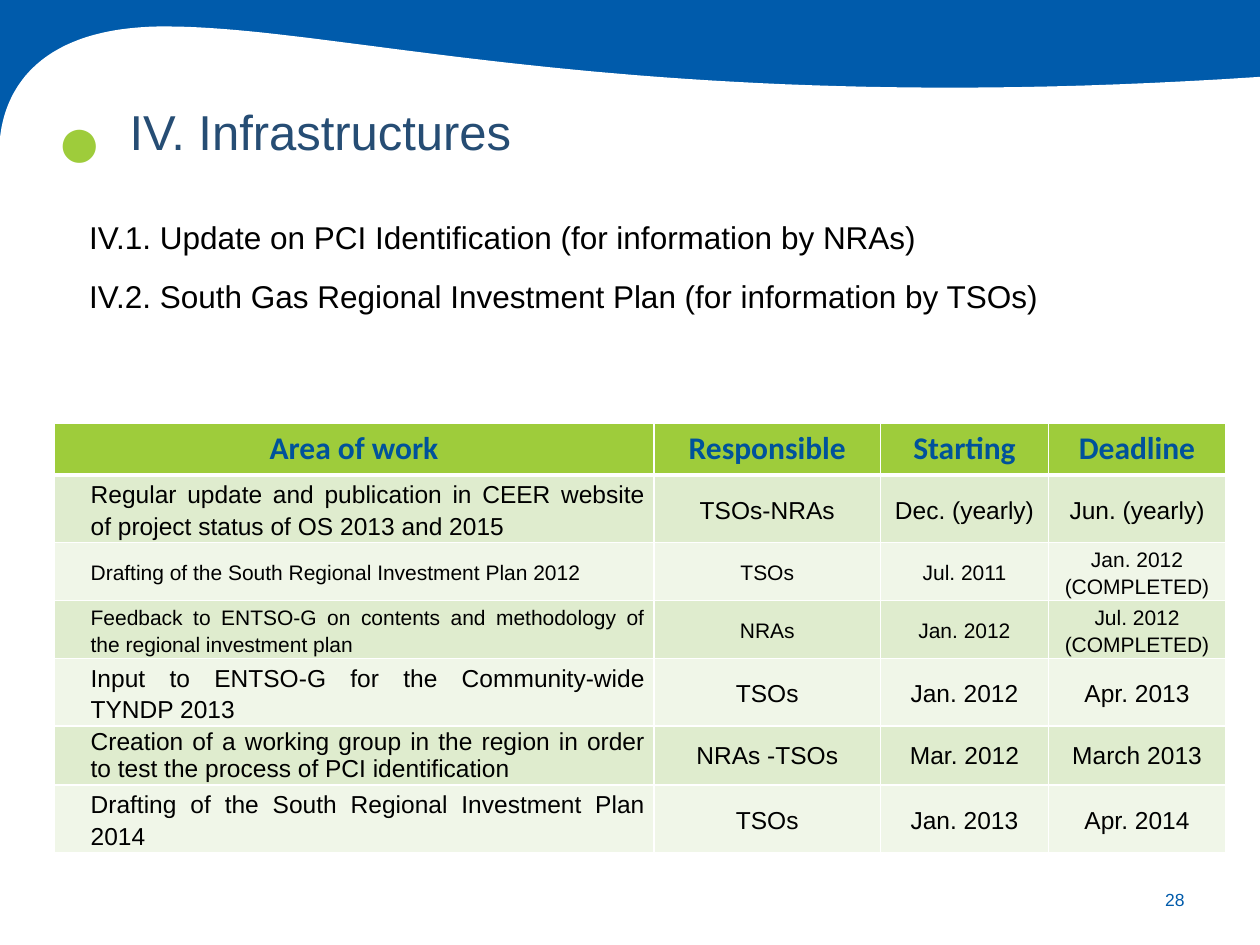
import pptx
import pptx.dml.color
import pptx.enum.shapes
import pptx.enum.text
import pptx.oxml
import pptx.oxml.ns
import pptx.util
from pptx.util import Inches

ALIGN = pptx.enum.text.PP_ALIGN
ANCHOR = pptx.enum.text.MSO_ANCHOR
BLUE, GREEN, WHITE, BLACK = "005BAB", "9ECC3B", "FFFFFF", "000000"
BANDS = ["DFECCE", "F0F6E8"]

COLUMN_WIDTHS = [4.76, 1.8, 1.33, 1.41]
ROW_HEIGHT = 0.41
HEADINGS = ["Area of work", "Responsible", "Starting", "Deadline"]
# Text size, line spacing, cell texts
TASKS = [
    (14, 1.15, ["Regular update and publication in CEER website of project status of OS 2013 and 2015",
                "TSOs-NRAs", "Dec. (yearly)", "Jun. (yearly)"]),
    (12, 1.15, ["Drafting of the South Regional Investment Plan 2012",
                "TSOs", "Jul. 2011", "Jan. 2012 (COMPLETED)"]),
    (12, 1.15, ["Feedback to ENTSO-G on contents and methodology of the regional investment plan",
                "NRAs", "Jan. 2012", "Jul. 2012 (COMPLETED)"]),
    (14, 1.15, ["Input to ENTSO-G for the Community-wide TYNDP 2013",
                "TSOs", "Jan. 2012", "Apr. 2013"]),
    (14, 1.0, ["Creation of a working group in the region in order to test the process of PCI identification",
               "NRAs -TSOs", "Mar. 2012", "March 2013"]),
    (14, 1.15, ["Drafting of the South Regional Investment Plan 2014",
                "TSOs", "Jan. 2013", "Apr. 2014"]),
]
AGENDA = [
    "IV.1. Update on PCI Identification (for information by NRAs)",
    "IV.2. South Gas Regional Investment Plan (for information by TSOs)",
]


def color(value):
    return pptx.dml.color.RGBColor.from_string(value)


def apply(target, values):
    for name, value in values.items():
        setattr(target, name, value)


def write(para, text, size, hue, face="Arial", bold=False, indent=None, **layout):
    """Fill a paragraph; indent is (left margin, first line) in inches."""
    apply(para, layout)
    if indent:
        properties = para._p.get_or_add_pPr()
        properties.set("marL", str(Inches(indent[0])))
        properties.set("indent", str(Inches(indent[1])))
    span = para.add_run()
    span.text = text
    apply(span.font, {"size": pptx.util.Pt(size), "name": face, "bold": bold})
    span.font.color.rgb = color(hue)


def add_text(page, place, lines, size, hue, anchor=ANCHOR.TOP, gap=0, **layout):
    box = page.shapes.add_textbox(*map(Inches, place))
    frame = box.text_frame
    apply(frame, {"word_wrap": True, "vertical_anchor": anchor})
    for index, line in enumerate(lines):
        para = frame.add_paragraph() if index else frame.paragraphs[0]
        if index and gap:
            para.space_before = pptx.util.Pt(gap)
        write(para, line, size, hue, **layout)


def paint(shape, hue):
    shape.shadow.inherit = False
    shape.fill.solid()
    shape.fill.fore_color.rgb = color(hue)
    shape.line.fill.background()


def bezier(start, first, second, end, steps=50):
    """Points along a cubic curve, without its start."""
    for step in range(1, steps + 1):
        t = step / steps
        weights = ((1 - t) ** 3, 3 * t * (1 - t) ** 2, 3 * t * t * (1 - t), t ** 3)
        yield tuple(sum(weight * point[axis] for weight, point in
                        zip(weights, (start, first, second, end))) for axis in (0, 1))


def add_wave(page):
    band = page.shapes.add_shape(pptx.enum.shapes.MSO_SHAPE.RECTANGLE,
                                 0, 0, Inches(10), Inches(1.15))
    paint(band, BLUE)
    points = [*bezier((0, 1.1), (0.03, 0.79), (0.23, 0.21), (1.31, 0.21)),
              *bezier((1.31, 0.21), (2.76, 0.21), (5.1, 0.94), (10, 0.61)),
              (10, 7.5), (0, 7.5)]
    builder = page.shapes.build_freeform(0, Inches(1.1), scale=1.0)
    builder.add_line_segments([(Inches(x), Inches(y)) for x, y in points])
    paint(builder.convert_to_shape(), WHITE)


def format_cell(cell, fill, top=1, bottom=1):
    cell.fill.solid()
    cell.fill.fore_color.rgb = color(fill)
    properties = cell._tc.get_or_add_tcPr()
    widths = {"lnL": 1, "lnR": 1, "lnT": top, "lnB": bottom}
    for position, (side, width) in enumerate(widths.items()):
        properties.insert(position, pptx.oxml.parse_xml(
            f'<a:{side} {pptx.oxml.ns.nsdecls("a")} w="{pptx.util.Pt(width)}">'
            f'<a:solidFill><a:srgbClr val="{WHITE}"/></a:solidFill></a:{side}>'))


def add_plan(page):
    frame = page.shapes.add_table(len(TASKS) + 1, len(HEADINGS), Inches(0.43), Inches(3.36),
                                  Inches(sum(COLUMN_WIDTHS)), Inches(3.4))
    table = frame.table
    for column, width in zip(table.columns, COLUMN_WIDTHS):
        column.width = Inches(width)
    for row in table.rows:
        row.height = Inches(ROW_HEIGHT)

    # Heading row
    for index, heading in enumerate(HEADINGS):
        cell = table.cell(0, index)
        format_cell(cell, GREEN, bottom=3)
        write(cell.text_frame.paragraphs[0], heading, 18, "00529B", "Calibri", True,
              alignment=ALIGN.CENTER)

    # Task rows
    side = Inches(0.07)
    for number, (size, spacing, texts) in enumerate(TASKS, 1):
        for index, text in enumerate(texts):
            cell = table.cell(number, index)
            format_cell(cell, BANDS[(number - 1) % 2], top=3 if number == 1 else 1)
            apply(cell, {"margin_left": side, "margin_right": side, "margin_top": 0,
                         "margin_bottom": 0, "vertical_anchor": ANCHOR.MIDDLE})
            write(cell.text_frame.paragraphs[0], text, size, BLACK,
                  indent=None if index else (0.22, 0), line_spacing=spacing,
                  alignment=ALIGN.CENTER if index else ALIGN.JUSTIFY)


def main():
    deck = pptx.Presentation()
    apply(deck, {"slide_width": Inches(10), "slide_height": Inches(7.5)})
    page = deck.slides.add_slide(deck.slide_layouts[6])

    # Background and page number
    add_wave(page)
    add_text(page, (8.94, 6.94, 0.56, 0.4), ["28"], 10, BLUE, ANCHOR.MIDDLE,
             alignment=ALIGN.RIGHT)

    # Title with its dot
    add_text(page, (0.35, 0.57, 0.55, 0.94), ["●"], 44, GREEN, ANCHOR.BOTTOM,
             indent=(0.39, -0.39), alignment=ALIGN.CENTER)
    add_text(page, (0.83, 0.76, 8.75, 0.57), ["IV. Infrastructures"], 28, "264D74",
             indent=(0.09, 0.01), alignment=ALIGN.JUSTIFY)

    # Work plan and agenda
    add_plan(page)
    add_text(page, (0.51, 1.62, 8.55, 0.98), AGENDA, 18, BLACK, gap=6,
             indent=(0.39, -0.29), line_spacing=1.2, space_after=pptx.util.Pt(2))

    deck.save("out.pptx")


if __name__ == "__main__":
    main()
